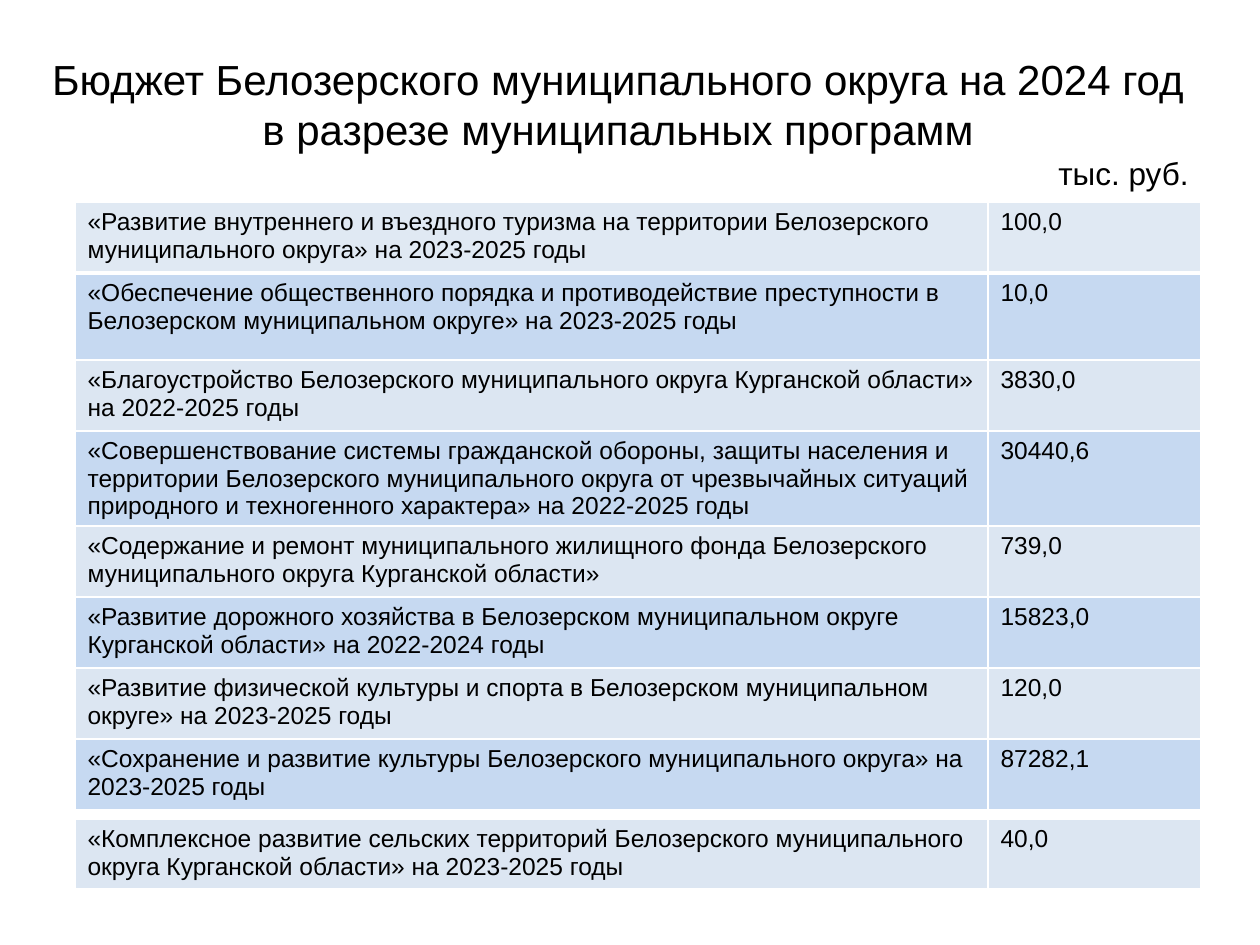
from lxml import etree
from pptx import Presentation
from pptx import util as u
from pptx.dml.color import RGBColor
from pptx.enum import text
from pptx.oxml import ns

PX = 914400 // 126
BLACK = RGBColor(0, 0, 0)
PALE = RGBColor(0xDC, 0xE6, 0xF2)
BLUE = RGBColor(0xC6, 0xD9, 0xF1)
WHITE = "FFFFFF"
COLS = [913, 213]

MAIN = [
    ("«Развитие внутреннего и въездного туризма на территории Белозерского муниципального округа» на 2023-2025 годы", "100,0", 71),
    ("«Обеспечение общественного порядка и противодействие преступности в Белозерском муниципальном округе» на 2023-2025 годы", "10,0", 87),
    ("«Благоустройство Белозерского муниципального округа Курганской области» на 2022-2025 годы", "3830,0", 71),
    ("«Совершенствование системы гражданской обороны, защиты населения и территории Белозерского муниципального округа от чрезвычайных ситуаций природного и техногенного характера» на 2022-2025 годы", "30440,6", 95),
    ("«Содержание и ремонт муниципального жилищного фонда Белозерского муниципального округа Курганской области»", "739,0", 71),
    ("«Развитие дорожного хозяйства в Белозерском муниципальном округе Курганской области» на 2022-2024 годы", "15823,0", 71),
    ("«Развитие физической культуры и спорта в Белозерском муниципальном округе» на 2023-2025 годы", "120,0", 71),
    ("«Сохранение и развитие культуры Белозерского муниципального округа» на 2023-2025 годы", "87282,1", 71),
]
LAST = [
    ("«Комплексное развитие сельских территорий Белозерского муниципального округа Курганской области» на 2023-2025 годы", "40,0", 71),
]


def style(par, size):
    par.font.name = "Arial"
    par.font.size = u.Pt(size)
    par.font.color.rgb = BLACK


def edge(cell, side, width):
    line = etree.SubElement(cell._tc.get_or_add_tcPr(), ns.qn("a:ln" + side), w=str(u.Pt(width)))
    fill = etree.SubElement(line, ns.qn("a:solidFill"))
    etree.SubElement(fill, ns.qn("a:srgbClr"), val=WHITE)


deck = Presentation()
deck.slide_width = u.Inches(10)
deck.slide_height = u.Inches(7.5)
slide = deck.slides.add_slide(deck.slide_layouts[6])

for top, rows in [(202, MAIN), (819, LAST)]:
    high = sum(row[2] for row in rows)
    frame = slide.shapes.add_table(len(rows), 2, 75 * PX, top * PX, sum(COLS) * PX, high * PX)
    table = frame.table
    table.first_row = False
    table.horz_banding = False
    for col, wide in zip(table.columns, COLS):
        col.width = wide * PX
    for i, (name, sum_, tall) in enumerate(rows):
        table.rows[i].height = tall * PX
        for j, words in enumerate([name, sum_]):
            cell = table.cell(i, j)
            cell.text = words
            style(cell.text_frame.paragraphs[0], 14)
            for side in "LRTB":
                thick = (side == "B" and i == 0) or (side == "T" and i == 1)
                edge(cell, side, 3 if thick else 1)
            cell.fill.solid()
            cell.fill.fore_color.rgb = BLUE if i % 2 else PALE
            if rows is MAIN and i == 0:
                tint = cell._tc.tcPr.find(ns.qn("a:solidFill"))[0]
                etree.SubElement(tint, ns.qn("a:alpha"), val="87000")

box = slide.shapes.add_textbox(35 * PX, 45 * PX, 1166 * PX, 155 * PX)
body = box.text_frame
body.word_wrap = True
body.vertical_anchor = text.MSO_ANCHOR.MIDDLE
title = body.paragraphs[0]
title.text = "Бюджет Белозерского муниципального округа на 2024 год в разрезе муниципальных программ"
title.alignment = text.PP_ALIGN.CENTER
style(title, 24)
unit = body.add_paragraph()
unit.text = "тыс. руб."
unit.alignment = text.PP_ALIGN.RIGHT
style(unit, 18)

deck.save("out.pptx")
